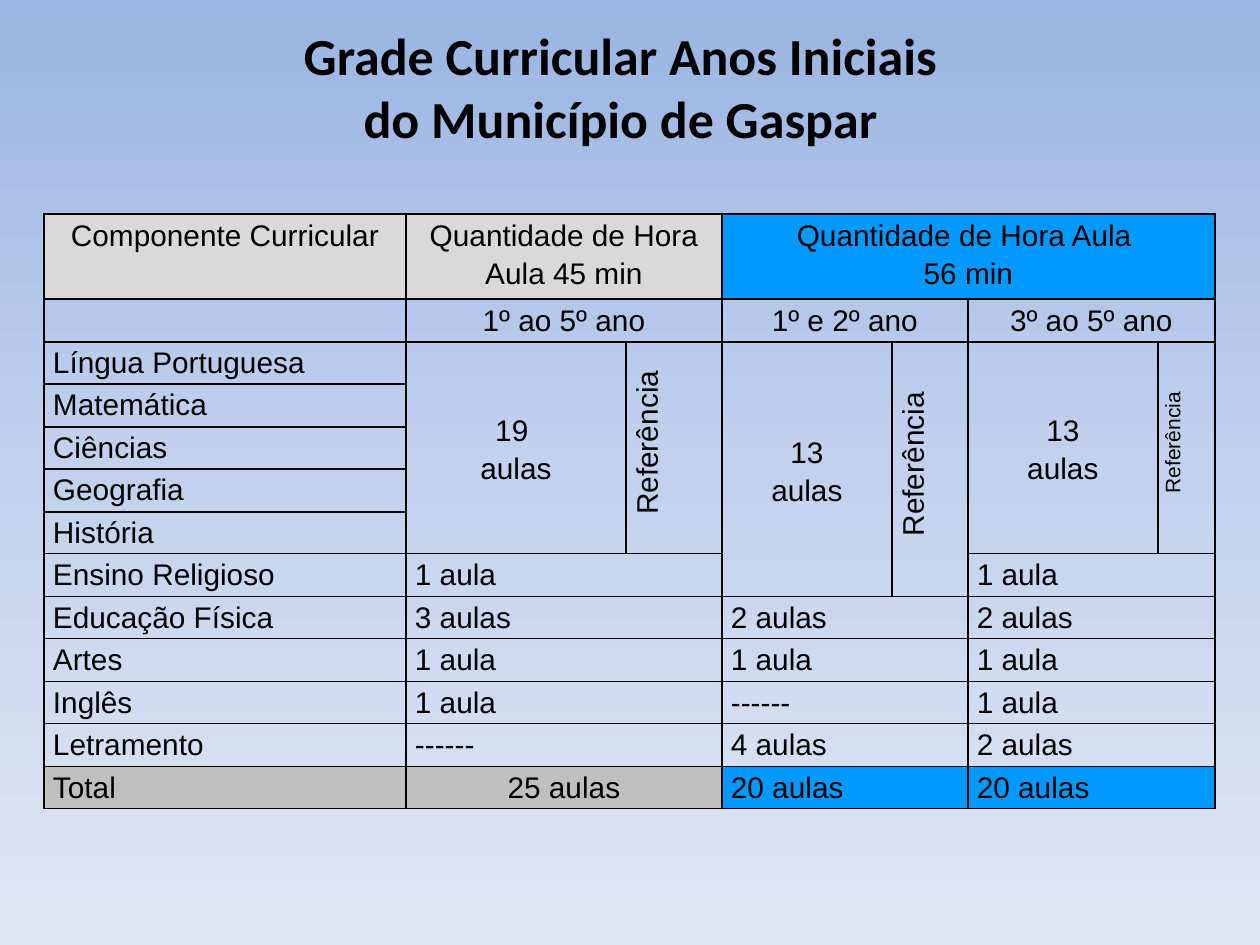
from copy import deepcopy
from dataclasses import dataclass

from lxml.etree import SubElement
from pptx import Presentation
from pptx.dml.color import RGBColor
from pptx.enum.text import MSO_ANCHOR as Anchor, MSO_AUTO_SIZE as AutoSize, PP_ALIGN as Align
from pptx.oxml.ns import qn
from pptx.util import Pt

EMU_PER_PX = 914400 // 126


@dataclass(frozen=True)
class Theme:
    text: str = "000000"
    gray: str = "D9D9D9"
    dark_gray: str = "BFBFBF"
    blue: str = "0099FF"
    sky: tuple = ((0, "9AB5E4"), (0.5, "C2D1ED"), (1, "E1E8F5"))
    title_font: str = "Calibri"
    table_font: str = "Arial"
    title_size: float = 29.7
    table_size: int = 17
    small_size: int = 12
    line_spacing: float = 1.15


THEME = Theme()
COLUMN_WIDTHS = [362, 220, 96, 170, 76, 190, 57]
ROW_HEIGHTS = [85] + [43, 42] * 6
GROUP_COLUMNS = (1, 3, 5)  # each year group covers two columns
SUBJECTS = ["Língua Portuguesa", "Matemática", "Ciências", "Geografia", "História"]
LESSONS = [
    ("Ensino Religioso", "1 aula", None, "1 aula"),
    ("Educação Física", "3 aulas", "2 aulas", "2 aulas"),
    ("Artes", "1 aula", "1 aula", "1 aula"),
    ("Inglês", "1 aula", "------", "1 aula"),
    ("Letramento", "------", "4 aulas", "2 aulas"),
]
# lessons, rows covered, anchor and size of the reference label
SHARED_LESSONS = [
    ("19 \naulas", 5, Anchor.MIDDLE, THEME.table_size),
    ("13\naulas", 6, Anchor.TOP, THEME.table_size),
    ("13\naulas", 5, Anchor.TOP, THEME.small_size),
]


def px(length):
    return length * EMU_PER_PX


def rgb(color):
    return RGBColor.from_string(color)


def paint_background(page):
    fill = page.background.fill
    fill.gradient()
    fill.gradient_angle = 270
    stop_list = page._element.find(".//" + qn("a:gsLst"))
    stop_list.append(deepcopy(stop_list[-1]))
    for stop, (position, color) in zip(fill.gradient_stops, THEME.sky):
        stop.position = position
        stop.color.rgb = rgb(color)


def set_font(para, name, size, bold=False):
    font = para.font
    font.name, font.size, font.bold = name, Pt(size), bold
    font.color.rgb = rgb(THEME.text)


def add_title(page, text):
    title = page.shapes.title
    title.left, title.top, title.width, title.height = map(px, (54, -24, 1134, 158))
    frame = title.text_frame
    frame.auto_size = AutoSize.NONE
    frame.vertical_anchor = Anchor.TOP
    frame.margin_top, frame.margin_bottom = px(48), 0
    frame.text = text
    para = frame.paragraphs[0]
    para.alignment = Align.CENTER
    set_font(para, THEME.title_font, THEME.title_size, bold=True)


def add_borders(cell):
    properties = cell._tc.get_or_add_tcPr()
    for index, side in enumerate(("lnL", "lnR", "lnT", "lnB")):
        line = SubElement(properties, qn(f"a:{side}"), w=str(Pt(1)))
        color_fill = SubElement(line, qn("a:solidFill"))
        SubElement(color_fill, qn("a:srgbClr"), val=THEME.text)
        properties.insert(index, line)


def add_table(page):
    """Add the empty grid with borders and no fill."""
    table = page.shapes.add_table(
        len(ROW_HEIGHTS), len(COLUMN_WIDTHS), px(44), px(214),
        px(sum(COLUMN_WIDTHS)), px(sum(ROW_HEIGHTS))).table
    table.first_row = table.horz_banding = False
    for column, width in zip(table.columns, COLUMN_WIDTHS):
        column.width = px(width)
    for row, height in zip(table.rows, ROW_HEIGHTS):
        row.height = px(height)
    for cell in table.iter_cells():
        cell.margin_left = cell.margin_right = px(9)
        cell.margin_top = cell.margin_bottom = 0
        cell.fill.background()
        add_borders(cell)
        set_font(cell.text_frame.paragraphs[0], THEME.table_font, THEME.table_size)
    return table


def write_cell(table, row, column, text, rows=1, columns=1, fill=None,
               align=Align.LEFT, anchor=Anchor.TOP, size=THEME.table_size):
    cell = table.cell(row, column)
    if rows * columns > 1:
        cell.merge(table.cell(row + rows - 1, column + columns - 1))
    cell.text = text
    cell.vertical_anchor = anchor
    if fill:
        cell.fill.solid()
        cell.fill.fore_color.rgb = rgb(fill)
    for para in cell.text_frame.paragraphs:
        para.alignment = align
        para.line_spacing = THEME.line_spacing
        set_font(para, THEME.table_font, size)
    return cell


def write_reference(table, row, column, rows, anchor, size):
    """Write the label that reads upwards beside the shared lessons."""
    cell = write_cell(table, row, column, "Referência", rows=rows,
                      align=Align.CENTER, anchor=anchor, size=size)
    cell._tc.get_or_add_tcPr().set("vert", "vert270")
    cell.text_frame.paragraphs[0]._p.get_or_add_pPr().set("marL", str(px(10)))


def write_headings(table):
    center = Align.CENTER
    write_cell(table, 0, 0, "Componente Curricular", fill=THEME.gray, align=center)
    write_cell(table, 0, 1, "Quantidade de Hora Aula 45 min", columns=2,
               fill=THEME.gray, align=center)
    write_cell(table, 0, 3, "Quantidade de Hora Aula \n56 min", columns=4,
               fill=THEME.blue, align=center)
    for column, years in zip(GROUP_COLUMNS, ("1º ao 5º ano", "1º e 2º ano", "3º ao 5º ano")):
        write_cell(table, 1, column, years, columns=2, align=center)


def write_lessons(table):
    first_row = 2
    for row, subject in enumerate(SUBJECTS, first_row):
        write_cell(table, row, 0, subject)
    for column, (text, rows, anchor, size) in zip(GROUP_COLUMNS, SHARED_LESSONS):
        write_cell(table, first_row, column, text, rows=rows,
                   align=Align.CENTER, anchor=Anchor.MIDDLE)
        write_reference(table, first_row, column + 1, rows, anchor, size)
    for row, (subject, *lessons) in enumerate(LESSONS, first_row + len(SUBJECTS)):
        write_cell(table, row, 0, subject)
        for column, text in zip(GROUP_COLUMNS, lessons):
            if text:
                write_cell(table, row, column, text, columns=2)


def write_totals(table):
    row = len(ROW_HEIGHTS) - 1
    write_cell(table, row, 0, "Total", fill=THEME.dark_gray)
    write_cell(table, row, 1, "25 aulas", columns=2, fill=THEME.dark_gray, align=Align.CENTER)
    for column in GROUP_COLUMNS[1:]:
        write_cell(table, row, column, "20 aulas", columns=2, fill=THEME.blue)


def main():
    deck = Presentation()
    deck.slide_width, deck.slide_height = px(1260), px(945)
    page = deck.slides.add_slide(deck.slide_layouts[5])
    paint_background(page)
    add_title(page, "Grade Curricular Anos Iniciais\vdo Município de Gaspar")
    table = add_table(page)
    write_headings(table)
    write_lessons(table)
    write_totals(table)
    deck.save("out.pptx")


if __name__ == "__main__":
    main()
